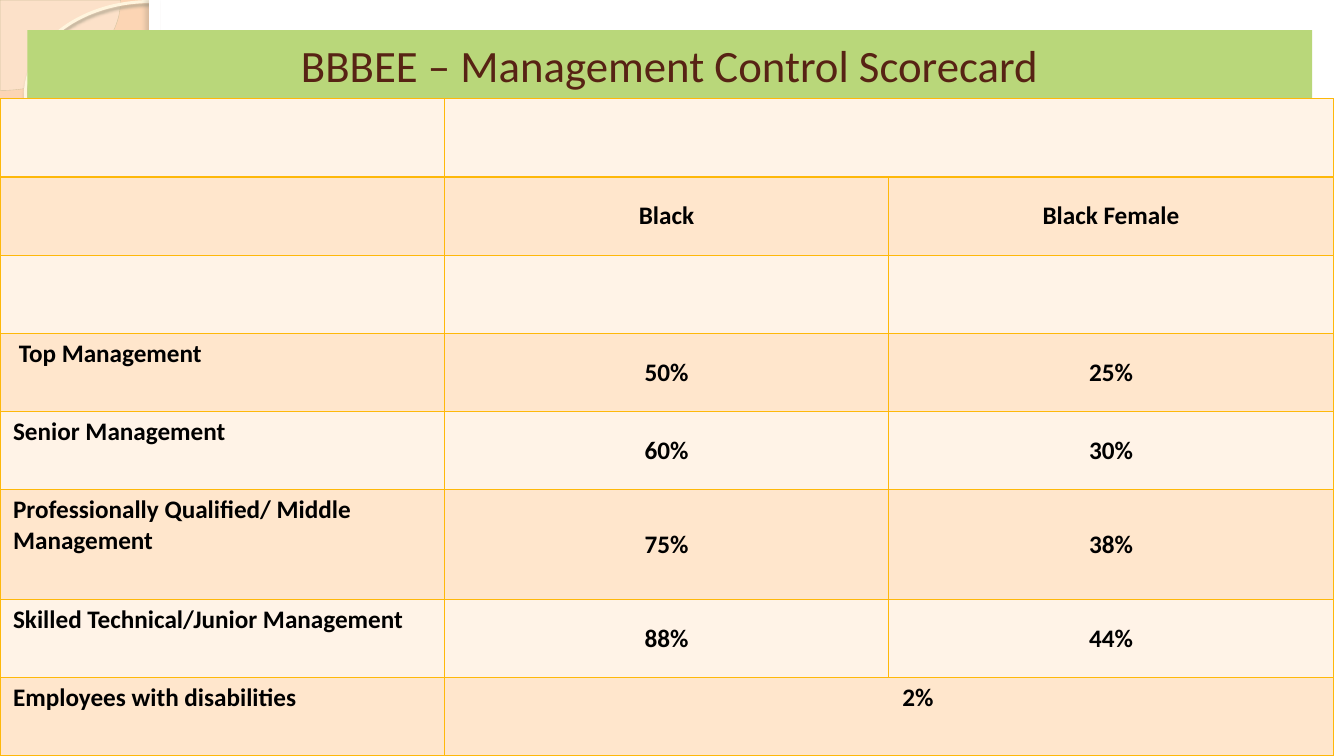
from lxml import etree
from pptx import Presentation
from pptx.dml.color import RGBColor
from pptx.enum.shapes import MSO_SHAPE
from pptx.enum.text import MSO_ANCHOR, PP_ALIGN
from pptx.oxml.ns import qn
from pptx.util import Cm, Pt

RECT, OVAL, PIE = MSO_SHAPE.RECTANGLE, MSO_SHAPE.OVAL, MSO_SHAPE.PIE
MID, TOP = MSO_ANCHOR.MIDDLE, MSO_ANCHOR.TOP
LEFT, CENTER = PP_ALIGN.LEFT, PP_ALIGN.CENTER

PEACH = RGBColor(0xFC, 0xD5, 0xB4)
CREAM = RGBColor(0xFE, 0xFA, 0xF4)
SAND = RGBColor(0xD3, 0xC3, 0x9F)
IVORY = RGBColor(0xFF, 0xF5, 0xDE)
WHITE = RGBColor(0xFF, 0xFF, 0xFF)
GREEN = RGBColor(0xB9, 0xD7, 0x7A)
BROWN = RGBColor(0x57, 0x23, 0x14)
BLACK = RGBColor(0, 0, 0)
GOLD = RGBColor(0xFE, 0xB8, 0x0A)
BANDS = RGBColor(0xFF, 0xF3, 0xE7), RGBColor(0xFF, 0xE6, 0xCC)

FONT = "Calibri"
TITLE = "BBBEE – Management Control Scorecard"
ROWS = [
    ("", "", ""),
    ("", "Black", "Black Female"),
    ("", "", ""),
    (" Top Management", "50%", "25%"),
    ("Senior Management", "60%", "30%"),
    ("Professionally Qualified/ Middle Management", "75%", "38%"),
    ("Skilled Technical/Junior Management", "88%", "44%"),
    ("Employees with disabilities", "2%", ""),
]
WIDE = (0, 7)
TALL = 5
COL, LOW, HIGH = 11.2, 1.97, 2.77


def add(slide, kind, box, fill=None, line=None, width=1):
    shape = slide.shapes.add_shape(kind, *map(Cm, box))
    shape.shadow.inherit = False
    if fill is None:
        shape.fill.background()
    else:
        shape.fill.solid()
        shape.fill.fore_color.rgb = fill
    if line is None:
        shape.line.fill.background()
    else:
        shape.line.color.rgb = line
        shape.line.width = Pt(width)
    return shape


def shade(shape, color, alpha, blur, dist, angle):
    effect = shape.element.spPr.find(qn("a:effectLst"))
    outer = etree.SubElement(effect, qn("a:outerShdw"), blurRad=str(Pt(blur)),
                             dist=str(Pt(dist)), dir=str(angle * 60000))
    tint = etree.SubElement(outer, qn("a:srgbClr"), val=str(color))
    etree.SubElement(tint, qn("a:alpha"), val=str(alpha * 1000))


def style(frame, size, color, bold, align):
    para = frame.paragraphs[0]
    para.alignment = align
    for run in para.runs:
        font = run.font
        font.name, font.size, font.bold = FONT, Pt(size), bold
        font.color.rgb = color


def border(cell):
    props = cell._tc.get_or_add_tcPr()
    for side in ("lnL", "lnR", "lnT", "lnB"):
        edge = etree.SubElement(props, qn("a:" + side), w=str(Pt(1)))
        fill = etree.SubElement(edge, qn("a:solidFill"))
        etree.SubElement(fill, qn("a:srgbClr"), val=str(GOLD))


def draw_back(slide):
    slide.background.fill.solid()
    slide.background.fill.fore_color.rgb = PEACH
    pie = add(slide, PIE, (-3.03, -2.27, 6.07, 4.55), CREAM, SAND, 0.25)
    pie.adjustments[0], pie.adjustments[1] = 0, 54.02
    tint = pie.element.spPr.find(qn("a:solidFill"))[0]
    etree.SubElement(tint, qn("a:alpha"), val="33000")
    ring = add(slide, OVAL, (0.64, 0.04, 6.3, 4.73), None, IVORY, 2.15)
    shade(ring, RGBColor(0xB0, 0xA6, 0x8F), 85, 2, 2, 90)
    add(slide, RECT, (3.76, 0, 30.11, 19.05), WHITE)
    strip = add(slide, RECT, (3.76, 0, 0.28, 19.05), WHITE)
    shade(strip, RGBColor(0x73, 0x6F, 0x63), 25, 3, 3, 180)


def draw_title(slide):
    bar = add(slide, RECT, (0.69, 0.76, 32.38, 1.73), GREEN)
    frame = bar.text_frame
    frame.text = TITLE
    frame.word_wrap = True
    frame.vertical_anchor = MID
    style(frame, 32, BROWN, False, CENTER)


def draw_table(slide):
    high = LOW * (len(ROWS) - 1) + HIGH
    table = slide.shapes.add_table(len(ROWS), 3, Cm(0), Cm(2.49),
                                   Cm(COL * 3), Cm(high)).table
    table.first_row = table.horz_banding = False
    for col in table.columns:
        col.width = Cm(COL)
    for r, texts in enumerate(ROWS):
        table.rows[r].height = Cm(HIGH if r == TALL else LOW)
        for c, text in enumerate(texts):
            cell = table.cell(r, c)
            border(cell)
            cell.fill.solid()
            cell.fill.fore_color.rgb = BANDS[r % 2]
            cell.margin_left = cell.margin_right = Cm(0.33)
            cell.margin_top = cell.margin_bottom = Cm(0.13)
            cell.vertical_anchor = MID if c and r not in WIDE else TOP
            if text:
                cell.text_frame.text = text
                style(cell.text_frame, 18, BLACK, True, CENTER if c else LEFT)
    for r in WIDE:
        table.cell(r, 1).merge(table.cell(r, 2))
    last = table.cell(WIDE[-1], 1).text_frame.paragraphs[0]
    last._p.get_or_add_pPr().set("marL", str(Cm(1.47)))


def main():
    deck = Presentation()
    deck.slide_width, deck.slide_height = Cm(33.87), Cm(19.05)
    slide = deck.slides.add_slide(deck.slide_layouts[6])
    draw_back(slide)
    draw_title(slide)
    draw_table(slide)
    deck.save("out.pptx")


if __name__ == "__main__":
    main()
